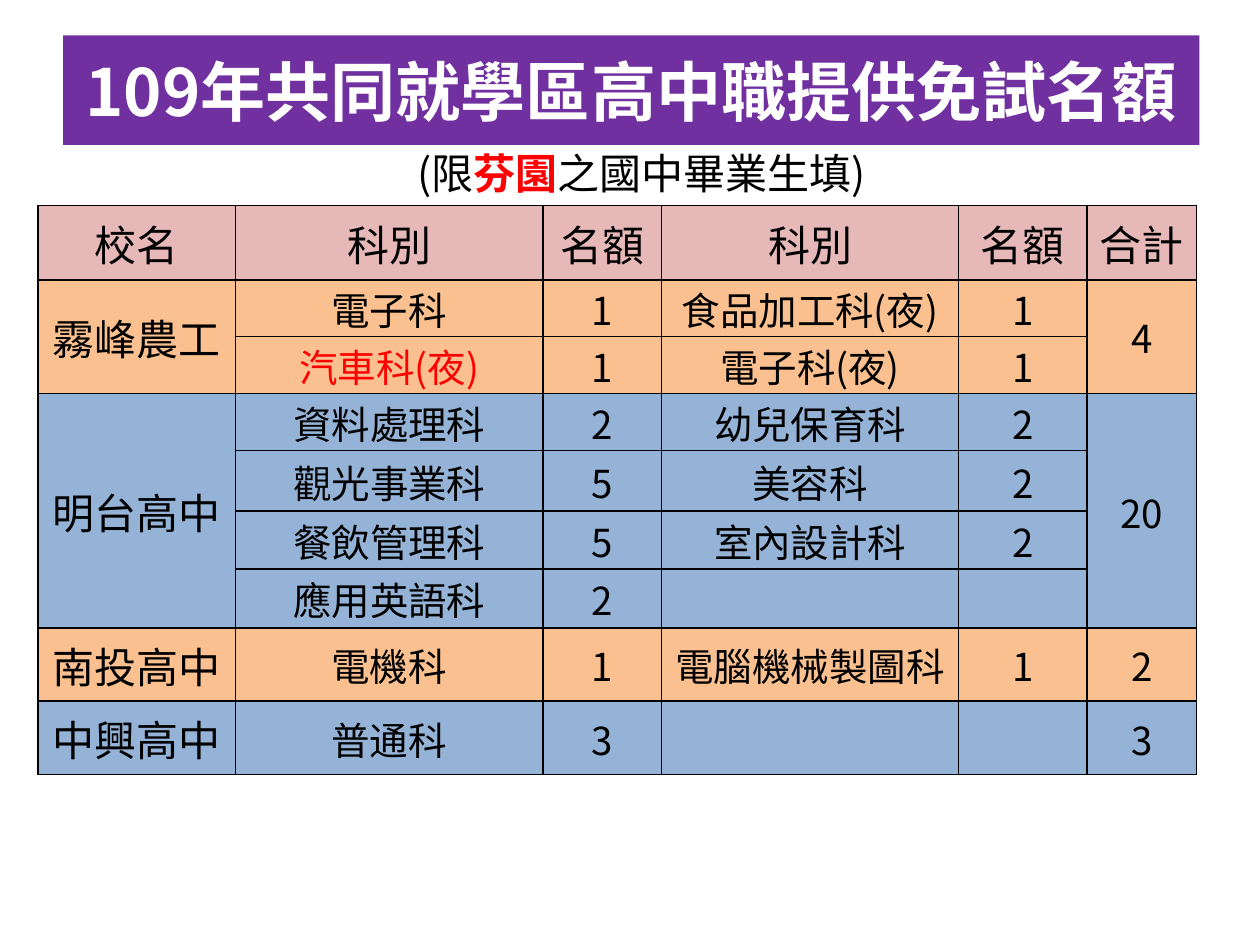
from dataclasses import dataclass
from lxml import etree
from pptx import Presentation
from pptx.dml.color import RGBColor
from pptx.enum.text import MSO_ANCHOR, MSO_AUTO_SIZE, PP_ALIGN
from pptx.oxml.ns import qn
from pptx.util import Pt

CENTER = PP_ALIGN.CENTER
MIDDLE = MSO_ANCHOR.MIDDLE
NO_FIT = MSO_AUTO_SIZE.NONE
FIT_SHAPE = MSO_AUTO_SIZE.SHAPE_TO_FIT_TEXT


@dataclass(frozen=True)
class Theme:
    font: str = "Noto Sans CJK SC"
    title: float = 37.2
    label: float = 24
    body: float = 22
    black: str = "000000"
    white: str = "FFFFFF"
    red: str = "FF0000"
    purple: str = "7030A0"
    pink: str = "E6B9B8"
    orange: str = "FAC090"
    blue: str = "95B3D7"


T = Theme()
HEADER = ["校名", "科別", "名額", "科別", "名額", "合計"]
SCHOOLS = [
    ("霧峰農工", "4", [
        ("電子科", "1", "食品加工科(夜)", "1"),
        ("汽車科(夜)", "1", "電子科(夜)", "1")]),
    ("明台高中", "20", [
        ("資料處理科", "2", "幼兒保育科", "2"),
        ("觀光事業科", "5", "美容科", "2"),
        ("餐飲管理科", "5", "室內設計科", "2"),
        ("應用英語科", "2", "", "")]),
    ("南投高中", "2", [("電機科", "1", "電腦機械製圖科", "1")]),
    ("中興高中", "3", [("普通科", "3", "", "")]),
]
HIGHLIGHT = "汽車科(夜)"
COL_WIDTHS = [113, 175.7, 67.7, 169.9, 73.4, 62.6]
ROW_HEIGHTS = [42.5, 31.7, 31.7, 31.7, 34.6, 33.1, 33.8, 41.8, 41.8]


def set_attrs(obj, **values):
    for name, value in values.items():
        setattr(obj, name, value)


def place(shape, left, top, width, height):
    set_attrs(shape, left=Pt(left), top=Pt(top), width=Pt(width), height=Pt(height))


def add_run(p, text, size, color=T.black, bold=False):
    p.alignment = CENTER
    r = p.add_run()
    r.text = text
    set_attrs(r.font, name=T.font, size=Pt(size), bold=bold)
    r.font.color.rgb = RGBColor.from_string(color)
    etree.SubElement(r.font._element, qn("a:ea"), typeface=T.font)


def add_title(s, text):
    sp = s.shapes.title
    place(sp, 36, 20.2, 649.4, 62.6)
    sp.fill.solid()
    sp.fill.fore_color.rgb = RGBColor.from_string(T.purple)
    tf = sp.text_frame
    set_attrs(tf, word_wrap=True, auto_size=NO_FIT, vertical_anchor=MIDDLE,
              margin_left=0, margin_right=0)
    add_run(tf.paragraphs[0], text, T.title, T.white, True)


def add_note(s, parts):
    tf = s.shapes.add_textbox(Pt(15.1), Pt(80.6), Pt(702.7), Pt(36)).text_frame
    set_attrs(tf, word_wrap=True, auto_size=FIT_SHAPE)
    for text, color, bold in parts:
        add_run(tf.paragraphs[0], text, T.label, color, bold)


def add_borders(cell):
    tc_pr = cell._tc.get_or_add_tcPr()
    for side in ("lnL", "lnR", "lnT", "lnB"):
        ln = etree.SubElement(tc_pr, qn(f"a:{side}"), w=str(Pt(1)))
        fill = etree.SubElement(ln, qn("a:solidFill"))
        etree.SubElement(fill, qn("a:srgbClr"), val=T.black)


def style_cell(cell, color):
    add_borders(cell)
    cell.fill.solid()
    cell.fill.fore_color.rgb = RGBColor.from_string(color)
    set_attrs(cell, vertical_anchor=MIDDLE, margin_left=Pt(0.7),
              margin_right=Pt(0.7), margin_top=Pt(0.7), margin_bottom=0)


def write_cell(cell, text, size):
    if text:
        color = T.red if text == HIGHLIGHT else T.black
        add_run(cell.text_frame.paragraphs[0], text, size, color)


def fill_school(table, top, school, color):
    name, total, departments = school
    last = len(HEADER) - 1
    bottom = top + len(departments) - 1
    for row, values in enumerate(departments, top):
        for col in range(len(HEADER)):
            style_cell(table.cell(row, col), color)
        for col, text in enumerate(values, 1):
            write_cell(table.cell(row, col), text, T.body)
    for col, text, size in ((0, name, T.label), (last, total, T.body)):
        cell = table.cell(top, col)
        if bottom > top:
            cell.merge(table.cell(bottom, col))
        write_cell(cell, text, size)
    return bottom + 1


def add_quota_table(s):
    table = s.shapes.add_table(
        len(ROW_HEIGHTS), len(COL_WIDTHS), Pt(21.6), Pt(117.4),
        Pt(sum(COL_WIDTHS)), Pt(sum(ROW_HEIGHTS))).table
    set_attrs(table, first_row=False, horz_banding=False)
    for column, width in zip(table.columns, COL_WIDTHS):
        column.width = Pt(width)
    for row, height in zip(table.rows, ROW_HEIGHTS):
        row.height = Pt(height)
    for col, text in enumerate(HEADER):
        style_cell(table.cell(0, col), T.pink)
        write_cell(table.cell(0, col), text, T.label)
    top = 1
    for i, school in enumerate(SCHOOLS):
        top = fill_school(table, top, school, (T.orange, T.blue)[i % 2])


def main():
    prs = Presentation()
    set_attrs(prs, slide_width=Pt(720), slide_height=Pt(540))
    s = prs.slides.add_slide(prs.slide_layouts[5])
    add_title(s, "109年共同就學區高中職提供免試名額")
    add_quota_table(s)
    add_note(s, [("(限", T.black, False), ("芬園", T.red, True),
                 ("之國中畢業生填)", T.black, False)])
    prs.save("out.pptx")


if __name__ == "__main__":
    main()
